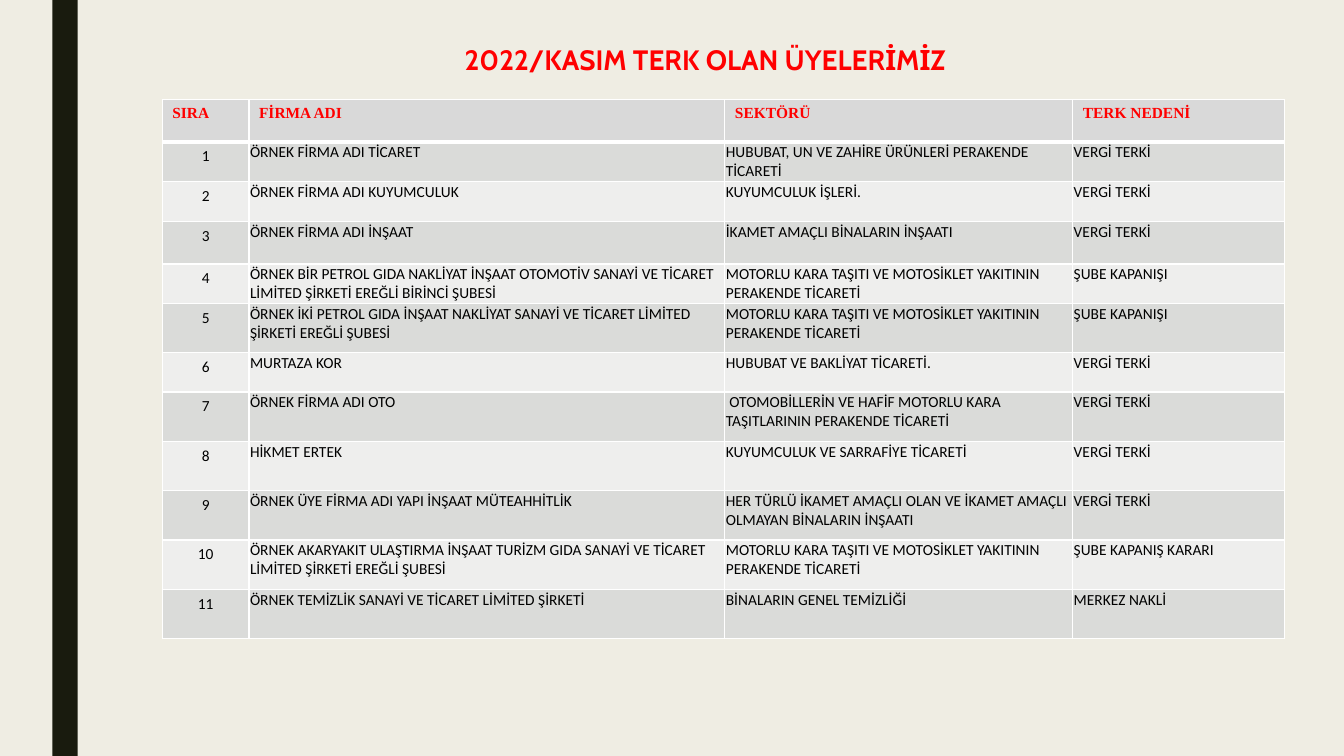
"""Build the slide that lists the members who left in November 2022."""
from lxml.etree import SubElement as Sub
from pptx import Presentation
from pptx.dml.color import RGBColor as Rgb
from pptx.enum.shapes import MSO_SHAPE as Kind
from pptx.enum.text import MSO_ANCHOR as Anchor, PP_ALIGN as Align
from pptx.oxml.ns import qn
from pptx.util import Inches, Pt

theme = {
    "back": "EFEDE3", "bar": "191B0E", "red": "FF0000", "ink": "000000",
    "line": "FFFFFF", "head": "D9D9D9", "odd": "DADBD9", "even": "EEEEED",
    "big": 20, "small": 11,
    "title": "Cabin", "label": "Times New Roman", "body": "Calibri",
}
unit = Inches(0.01)
cols = [86, 472, 345, 210]
rows = [42, 39, 40, 42, 39, 49, 39] + [49] * 5
fuel = "MOTORLU KARA TAŞITI VE MOTOSİKLET YAKITININ PERAKENDE TİCARETİ"
tax, shut = "VERGİ TERKİ", "ŞUBE KAPANIŞI"
heads = ["SIRA", "FİRMA ADI", "SEKTÖRÜ", "TERK NEDENİ"]
firms = [
    ("ÖRNEK FİRMA ADI TİCARET",
     "HUBUBAT, UN VE ZAHİRE ÜRÜNLERİ PERAKENDE TİCARETİ", tax),
    ("ÖRNEK FİRMA ADI KUYUMCULUK", "KUYUMCULUK İŞLERİ.", tax),
    ("ÖRNEK FİRMA ADI İNŞAAT", "İKAMET AMAÇLI BİNALARIN İNŞAATI", tax),
    ("ÖRNEK BİR PETROL GIDA NAKLİYAT İNŞAAT OTOMOTİV SANAYİ VE TİCARET "
     "LİMİTED ŞİRKETİ EREĞLİ BİRİNCİ ŞUBESİ", fuel, shut),
    ("ÖRNEK İKİ PETROL GIDA İNŞAAT NAKLİYAT SANAYİ VE TİCARET LİMİTED "
     "ŞİRKETİ EREĞLİ ŞUBESİ", fuel, shut),
    ("MURTAZA KOR", "HUBUBAT VE BAKLİYAT TİCARETİ.", tax),
    ("ÖRNEK FİRMA ADI OTO",
     " OTOMOBİLLERİN VE HAFİF MOTORLU KARA TAŞITLARININ PERAKENDE TİCARETİ", tax),
    ("HİKMET ERTEK", "KUYUMCULUK VE SARRAFİYE TİCARETİ", tax),
    ("ÖRNEK ÜYE FİRMA ADI YAPI İNŞAAT MÜTEAHHİTLİK",
     "HER TÜRLÜ İKAMET AMAÇLI OLAN VE İKAMET AMAÇLI OLMAYAN BİNALARIN İNŞAATI", tax),
    ("ÖRNEK AKARYAKIT ULAŞTIRMA İNŞAAT TURİZM GIDA SANAYİ VE TİCARET "
     "LİMİTED ŞİRKETİ EREĞLİ ŞUBESİ", fuel, "ŞUBE KAPANIŞ KARARI"),
    ("ÖRNEK TEMİZLİK SANAYİ VE TİCARET LİMİTED ŞİRKETİ",
     "BİNALARIN GENEL TEMİZLİĞİ", "MERKEZ NAKLİ"),
]


def style(para, face, size, color, bold):
    """Set the font of one paragraph."""
    font = para.font
    font.name, font.size, font.bold = theme[face], Pt(theme[size]), bold
    font.color.rgb = Rgb.from_string(theme[color])


def edge(cell, top, base):
    """Draw the four borders of a cell, with top and base widths in points."""
    props = cell._tc.get_or_add_tcPr()
    for spot, (side, width) in enumerate(zip("LRTB", (1, 1, top, base))):
        line = Sub(props, qn(f"a:ln{side}"), w=str(Pt(width)))
        Sub(Sub(line, qn("a:solidFill")), qn("a:srgbClr"), val=theme["line"])
        props.insert(spot, line)


deck = Presentation()
deck.slide_width, deck.slide_height = Inches(13.33), Inches(7.5)
slide = deck.slides.add_slide(deck.slide_layouts[6])
slide.background.fill.solid()
slide.background.fill.fore_color.rgb = Rgb.from_string(theme["back"])

bar = slide.shapes.add_shape(Kind.RECTANGLE, 52 * unit, 0, 25 * unit, deck.slide_height)
bar.shadow.inherit = False
bar.fill.solid()
bar.fill.fore_color.rgb = Rgb.from_string(theme["bar"])
bar.line.fill.background()

title = slide.shapes.add_textbox(347 * unit, 40 * unit, 705 * unit, 42 * unit).text_frame
title.word_wrap = True
title.vertical_anchor = Anchor.MIDDLE
para = title.paragraphs[0]
para.text = "2022/KASIM TERK OLAN ÜYELERİMİZ"
para.alignment, para.line_spacing = Align.CENTER, 0.89
style(para, "title", "big", "red", True)

table = slide.shapes.add_table(len(rows), len(cols), 161 * unit, 99 * unit,
                               sum(cols) * unit, sum(rows) * unit).table
table.horz_banding = False
for col, width in zip(table.columns, cols):
    col.width = width * unit
for row, height in zip(table.rows, rows):
    row.height = height * unit

lines = [heads] + [(str(num), *firm) for num, firm in enumerate(firms, 1)]
for r, line in enumerate(lines):
    shade = "head" if r == 0 else "odd" if r % 2 else "even"
    for c, text in enumerate(line):
        cell = table.cell(r, c)
        cell.text = text
        cell.fill.solid()
        cell.fill.fore_color.rgb = Rgb.from_string(theme[shade])
        edge(cell, 3 if r == 1 else 1, 3 if r == 0 else 1)
        para = cell.text_frame.paragraphs[0]
        if r == 0:
            style(para, "label", "small", "red", True)
            continue
        style(para, "body", "small", "ink", False)
        if c == 0:
            para.alignment = Align.CENTER
        else:
            cell.margin_left = cell.margin_top = cell.margin_right = unit
            cell.margin_bottom = 0

deck.save("out.pptx")
